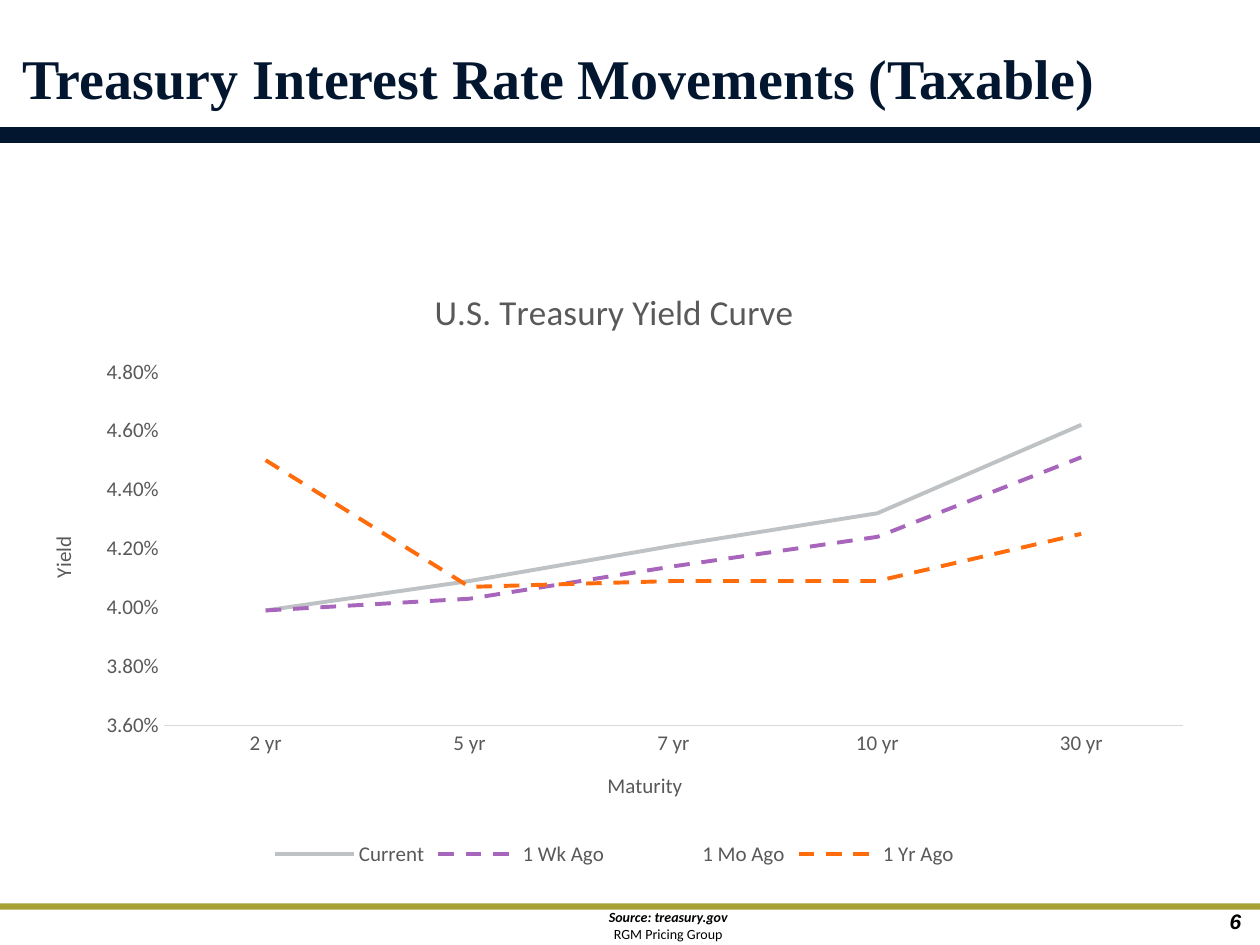
"""Build the slide on Treasury interest rate movements."""
import pptx
import pptx.chart.data
import pptx.dml.color
import pptx.enum.chart
import pptx.enum.dml
import pptx.enum.shapes
import pptx.enum.text
import pptx.oxml
import pptx.oxml.ns
import pptx.util

Color = pptx.dml.color.RGBColor
Dash = pptx.enum.dml.MSO_LINE
Align = pptx.enum.text.PP_ALIGN
Chart = pptx.enum.chart

WIDTH, HEIGHT = pptx.util.Inches(10), pptx.util.Inches(7.5)
NAVY = Color(0x03, 0x16, 0x2F)
OLIVE = Color(0xA7, 0xA1, 0x33)
BLACK = Color(0, 0, 0)
WHITE = Color(0xFF, 0xFF, 0xFF)
SLATE = Color(0x59, 0x59, 0x59)
PALE = Color(0xD9, 0xD9, 0xD9)
SILVER = Color(0xBE, 0xC2, 0xC4)
PURPLE = Color(0xA8, 0x65, 0xBC)
ORANGE = Color(0xFF, 0x6C, 0x0C)

MATURITIES = ["2 yr", "5 yr", "7 yr", "10 yr", "30 yr"]
CURVES = [
    ("Current", [3.99, 4.09, 4.21, 4.32, 4.62], SILVER, Dash.SOLID),
    ("1 Wk Ago", [3.99, 4.03, 4.14, 4.24, 4.51], PURPLE, Dash.DASH),
    ("1 Mo Ago", [4.3, 4.3, 4.4, 4.5, 4.7], WHITE, Dash.SQUARE_DOT),
    ("1 Yr Ago", [4.50, 4.07, 4.09, 4.09, 4.25], ORANGE, Dash.DASH),
]
PLOT_AREA = {"x": 0.12, "y": 0.18, "w": 0.86, "h": 0.58}


def place(left, top, width, height):
    """Turn lengths in inches into a frame of slide units."""
    return [pptx.util.Inches(length) for length in (left, top, width, height)]


def set_font(font, size, name="Calibri", color=SLATE, **styles):
    """Apply a set of format values to a font."""
    values = {"size": pptx.util.Pt(size), "name": name, "bold": False, **styles}
    for key, value in values.items():
        setattr(font, key, value)
    font.color.rgb = color


def add_band(page, top, height, color, edge=0):
    """Draw a bar across the whole slide."""
    band = page.shapes.add_shape(
        pptx.enum.shapes.MSO_SHAPE.RECTANGLE, *place(0, top, 10, height))
    band.shadow.inherit = False
    band.fill.solid()
    band.fill.fore_color.rgb = color
    if edge:
        band.line.color.rgb = color
        band.line.width = pptx.util.Pt(edge)
    else:
        band.line.fill.background()


def add_text(page, frame, lines, align, inset=True):
    """Add a text box from pairs of wording and font values."""
    box = page.shapes.add_textbox(*place(*frame)).text_frame
    box.word_wrap = True
    if not inset:
        for side in ("left", "top", "right", "bottom"):
            setattr(box, f"margin_{side}", 0)
    for index, (wording, style) in enumerate(lines):
        para = box.add_paragraph() if index else box.paragraphs[0]
        para.alignment = align
        span = para.add_run()
        span.text = wording
        set_font(span.font, **style)


def add_title(owner, wording, size):
    """Give a chart or an axis its title."""
    para = (owner.chart_title if hasattr(owner, "chart_title")
            else owner.axis_title).text_frame.paragraphs[0]
    span = para.add_run()
    span.text = wording
    set_font(span.font, size)


def style_axis(axis, title):
    """Set the look shared by both axes."""
    axis.has_major_gridlines = False
    axis.major_tick_mark = axis.minor_tick_mark = Chart.XL_TICK_MARK.NONE
    set_font(axis.tick_labels.font, 12)
    add_title(axis, title, 12)


def fix_plot_area(chart):
    """Pin the inner plot area to shares of the chart."""
    area = chart.plots[0]._element.getparent()
    for old in area.findall(pptx.oxml.ns.qn("c:layout")):
        area.remove(old)
    shares = "".join(f'<c:{key} val="{share}"/>' for key, share in PLOT_AREA.items())
    area.insert(0, pptx.oxml.parse_xml(
        f'<c:layout {pptx.oxml.ns.nsdecls("c")}><c:manualLayout>'
        '<c:layoutTarget val="inner"/><c:xMode val="edge"/><c:yMode val="edge"/>'
        f'{shares}</c:manualLayout></c:layout>'))


def add_yield_chart(page):
    """Add the line chart of yields by maturity."""
    data = pptx.chart.data.CategoryChartData(number_format="0.00%")
    data.categories = MATURITIES
    for name, yields, _, _ in CURVES:
        data.add_series(name, [round(value / 100, 4) for value in yields])
    chart = page.shapes.add_chart(
        Chart.XL_CHART_TYPE.LINE, *place(0.17, 2.08, 9.41, 4.84), data).chart
    set_font(chart.font, 12, color=BLACK)
    add_title(chart, "U.S. Treasury Yield Curve", 20)

    chart.has_legend = True
    chart.legend.position = Chart.XL_LEGEND_POSITION.BOTTOM
    chart.legend.include_in_layout = False
    set_font(chart.legend.font, 12)

    style_axis(chart.category_axis, "Maturity")
    chart.category_axis.format.line.color.rgb = PALE
    chart.category_axis.format.line.width = pptx.util.Pt(0.75)
    rates = chart.value_axis
    style_axis(rates, "Yield")
    rates.format.line.fill.background()
    scale = {"minimum_scale": 0.036, "maximum_scale": 0.048, "major_unit": 0.002}
    for key, value in scale.items():
        setattr(rates, key, value)
    rates.tick_labels.number_format = "0.00%"
    rates.tick_labels.number_format_is_linked = False

    chart.plots[0].vary_by_categories = False
    for series, (_, _, color, dash) in zip(chart.plots[0].series, CURVES):
        series.smooth = False
        series.marker.style = Chart.XL_MARKER_STYLE.NONE
        line = series.format.line
        line.color.rgb = color
        line.width = pptx.util.Pt(2.25)
        line.dash_style = dash
    fix_plot_area(chart)


def main():
    """Assemble and save the deck."""
    deck = pptx.Presentation()
    deck.slide_width, deck.slide_height = WIDTH, HEIGHT
    page = deck.slides.add_slide(deck.slide_layouts[6])
    add_band(page, 7.17, 0.05, OLIVE)
    add_band(page, 1.02, 0.1, NAVY, edge=2)
    source = {"size": 8, "color": BLACK}
    add_text(page, (4.24, 7.21, 2.13, 0.23), [
        ("Source: treasury.gov", {**source, "bold": True, "italic": True}),
        ("RGM Pricing Group", source),
    ], Align.CENTER, inset=False)
    add_text(page, (-0.92, 0.3, 9.71, 0.54), [
        ("Treasury Interest Rate Movements (Taxable)",
         {"size": 32, "name": "Times New Roman", "color": NAVY, "bold": True}),
    ], Align.RIGHT)
    add_text(page, (7.62, 7.16, 2.33, 0.4), [
        ("6", {"size": 12, "name": "Arial", "color": BLACK,
               "bold": True, "italic": True}),
    ], Align.RIGHT)
    add_yield_chart(page)
    deck.save("out.pptx")


if __name__ == "__main__":
    main()
